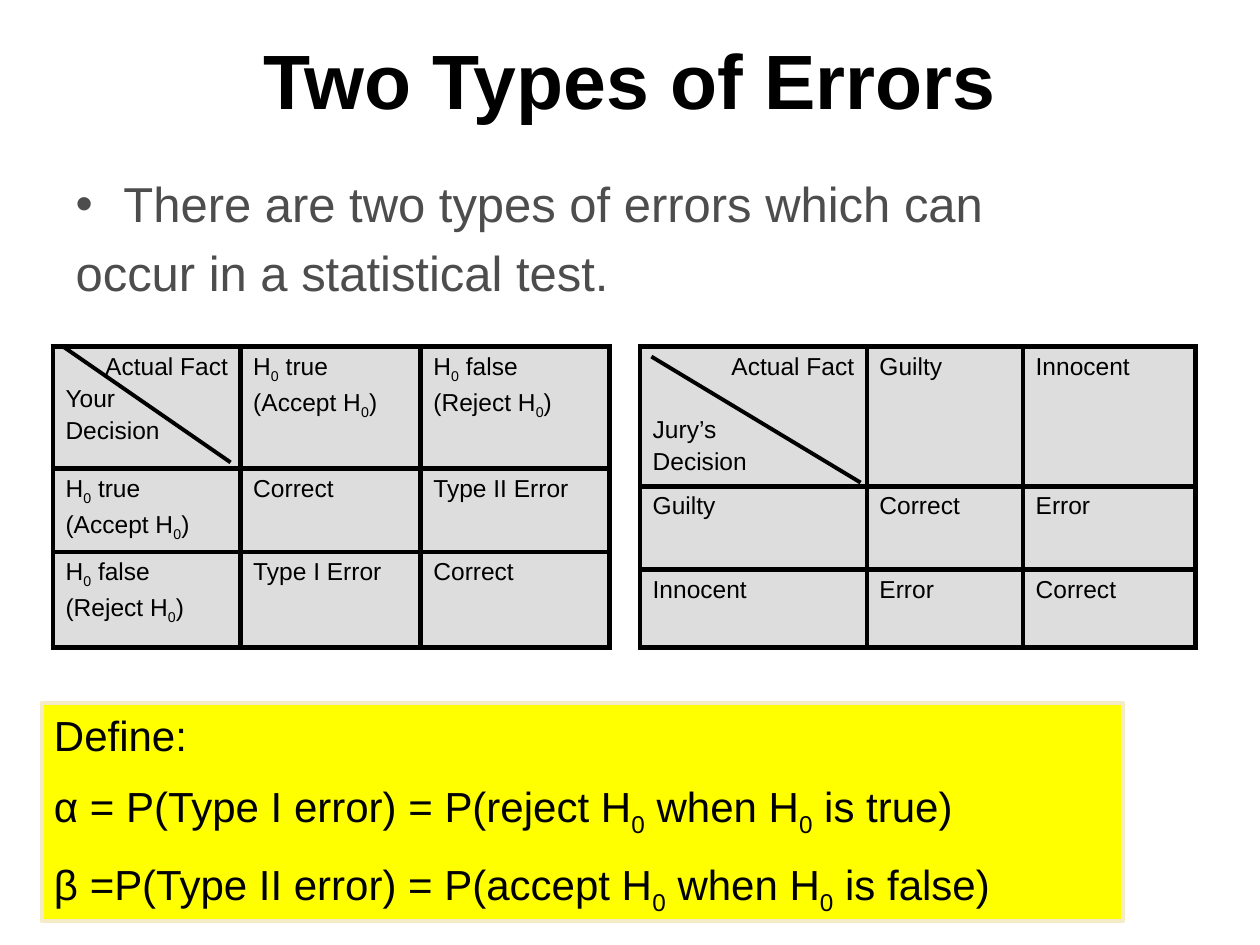
from pptx import Presentation
from pptx.dml.color import RGBColor
from pptx.enum.shapes import MSO_CONNECTOR, MSO_SHAPE
from pptx.enum.text import MSO_ANCHOR, MSO_AUTO_SIZE, PP_ALIGN
from pptx.oxml.ns import qn
from pptx.util import Inches, Pt
from lxml import etree

LINE = MSO_CONNECTOR.STRAIGHT
RECT = MSO_SHAPE.RECTANGLE
TOP, MIDDLE = MSO_ANCHOR.TOP, MSO_ANCHOR.MIDDLE
FIXED, GROW = MSO_AUTO_SIZE.NONE, MSO_AUTO_SIZE.SHAPE_TO_FIT_TEXT
LEFT, CENTER, RIGHT = PP_ALIGN.LEFT, PP_ALIGN.CENTER, PP_ALIGN.RIGHT

BLACK = RGBColor(0, 0, 0)
GRAY = RGBColor(0x4D, 0x4D, 0x4D)
SILVER = RGBColor(0xDD, 0xDD, 0xDD)
YELLOW = RGBColor(0xFF, 0xFF, 0)
CREAM = RGBColor(0xF4, 0xEC, 0xC6)

TITLE = {"name": "Arial", "size": Pt(44), "bold": True}
BODY = {"name": "Arial", "size": Pt(28)}
CELL = {"name": "Arial", "size": Pt(14)}
NOTE = {"name": "Arial", "size": Pt(24)}

TRUE = "H_0 true\n(Accept H_0)"
FALSE = "H_0 false\n(Reject H_0)"
TEST = [
    ["Actual Fact\nYour\nDecision", TRUE, FALSE],
    [TRUE, "Correct", "Type II Error"],
    [FALSE, "Type I Error", "Correct"],
]
TRIAL = [
    ["Actual Fact\nJury’s\nDecision", "Guilty", "Innocent"],
    ["Guilty", "Correct", "Error"],
    ["Innocent", "Error", "Correct"],
]
DEFINE = """Define:
α = P(Type I error) = P(reject H_0 when H_0 is true)
β =P(Type II error) = P(accept H_0 when H_0 is false)"""


def place(shape, *box):
    for name, value in zip(("left", "top", "width", "height"), box):
        setattr(shape, name, Inches(value))


def add_run(para, text, style, color, sub=False):
    run = para.add_run()
    run.text = text
    for name, value in style.items():
        setattr(run.font, name, value)
    run.font.color.rgb = color
    if sub:
        run._r.get_or_add_rPr().set("baseline", "-25000")


def set_gap(para, percent):
    """Set the space before as a percentage of the font size."""
    space = etree.Element(qn("a:spcBef"))
    etree.SubElement(space, qn("a:spcPct"), val=str(percent * 1000))
    para._p.get_or_add_pPr().insert(0, space)


def write(frame, text, style, color=BLACK, align=LEFT, gap=0):
    """Write one paragraph a line; the character after _ is a subscript."""
    for i, line in enumerate(text.split("\n")):
        para = frame.add_paragraph() if i else frame.paragraphs[0]
        para.alignment = align
        set_gap(para, gap)
        head, *rest = line.split("_")
        add_run(para, head, style, color)
        for part in rest:
            add_run(para, part[0], style, color, sub=True)
            if part[1:]:
                add_run(para, part[1:], style, color)


def add_title(slide, text):
    title = slide.shapes.title
    place(title, 0.5, 0, 9, 1.25)
    frame = title.text_frame
    frame.auto_size, frame.vertical_anchor = FIXED, MIDDLE
    write(frame, text, TITLE, align=CENTER)


def add_body(slide, text):
    body = slide.placeholders[1]
    place(body, 0.5, 1.33, 8.75, 1.33)
    frame = body.text_frame
    frame.auto_size = FIXED
    write(frame, text, BODY, GRAY, gap=20)
    for i, para in enumerate(frame.paragraphs):
        props = para._p.get_or_add_pPr()
        props.set("marL", str(Inches(0.38)))
        props.set("indent", str(-Inches(0.38)))
        if i:
            etree.SubElement(props, qn("a:buNone"))
        else:
            etree.SubElement(props, qn("a:buChar"), char="•")


def add_border(cell):
    props = cell._tc.get_or_add_tcPr()
    for i, side in enumerate(("lnL", "lnR", "lnT", "lnB")):
        line = etree.Element(qn("a:" + side), w=str(Pt(3)))
        fill = etree.SubElement(line, qn("a:solidFill"))
        etree.SubElement(fill, qn("a:srgbClr"), val=str(BLACK))
        props.insert(i, line)


def add_grid(slide, left, top, cols, rows, data):
    frame = slide.shapes.add_table(
        len(rows), len(cols), Inches(left), Inches(top),
        Inches(sum(cols)), Inches(sum(rows)))
    table = frame.table
    table.first_row = table.horz_banding = False
    for col, width in zip(table.columns, cols):
        col.width = Inches(width)
    for row, height, texts in zip(table.rows, rows, data):
        row.height = Inches(height)
        for cell, text in zip(row.cells, texts):
            cell.fill.solid()
            cell.fill.fore_color.rgb = SILVER
            add_border(cell)
            write(cell.text_frame, text, CELL, gap=20)
    corner = table.cell(0, 0).text_frame.paragraphs
    corner[0].alignment = RIGHT
    return corner


def add_line(slide, *ends):
    line = slide.shapes.add_connector(LINE, *map(Inches, ends))
    line.line.color.rgb = BLACK
    line.line.width = Pt(2.25)
    etree.SubElement(line._element.spPr, qn("a:effectLst"))


def add_note(slide, text):
    box = slide.shapes.add_shape(
        RECT, *map(Inches, (0.33, 5.58, 8.58, 1.73)))
    box.shadow.inherit = False
    box.fill.solid()
    box.fill.fore_color.rgb = YELLOW
    box.line.color.rgb = CREAM
    box.line.width = Pt(2.25)
    frame = box.text_frame
    frame.word_wrap = True
    frame.auto_size, frame.vertical_anchor = GROW, TOP
    write(frame, text, NOTE, gap=50)


def main():
    deck = Presentation()
    deck.slide_width, deck.slide_height = Inches(10), Inches(7.5)
    slide = deck.slides.add_slide(deck.slide_layouts[1])
    add_title(slide, "Two Types of Errors")
    add_body(slide, "There are two types of errors which can\n"
                    "occur in a statistical test.")
    corner = add_grid(slide, 5.08, 2.75, (1.8, 1.24, 1.37),
                      (1.11, 0.66, 0.62), TRIAL)
    corner[1].space_before = Pt(20.5)
    add_grid(slide, 0.42, 2.75, (1.49, 1.43, 1.5),
             (0.97, 0.66, 0.76), TEST)
    add_line(slide, 0.5, 2.75, 1.83, 3.67)
    add_line(slide, 5.17, 2.83, 6.83, 3.83)
    add_note(slide, DEFINE)
    deck.save("out.pptx")


if __name__ == "__main__":
    main()
